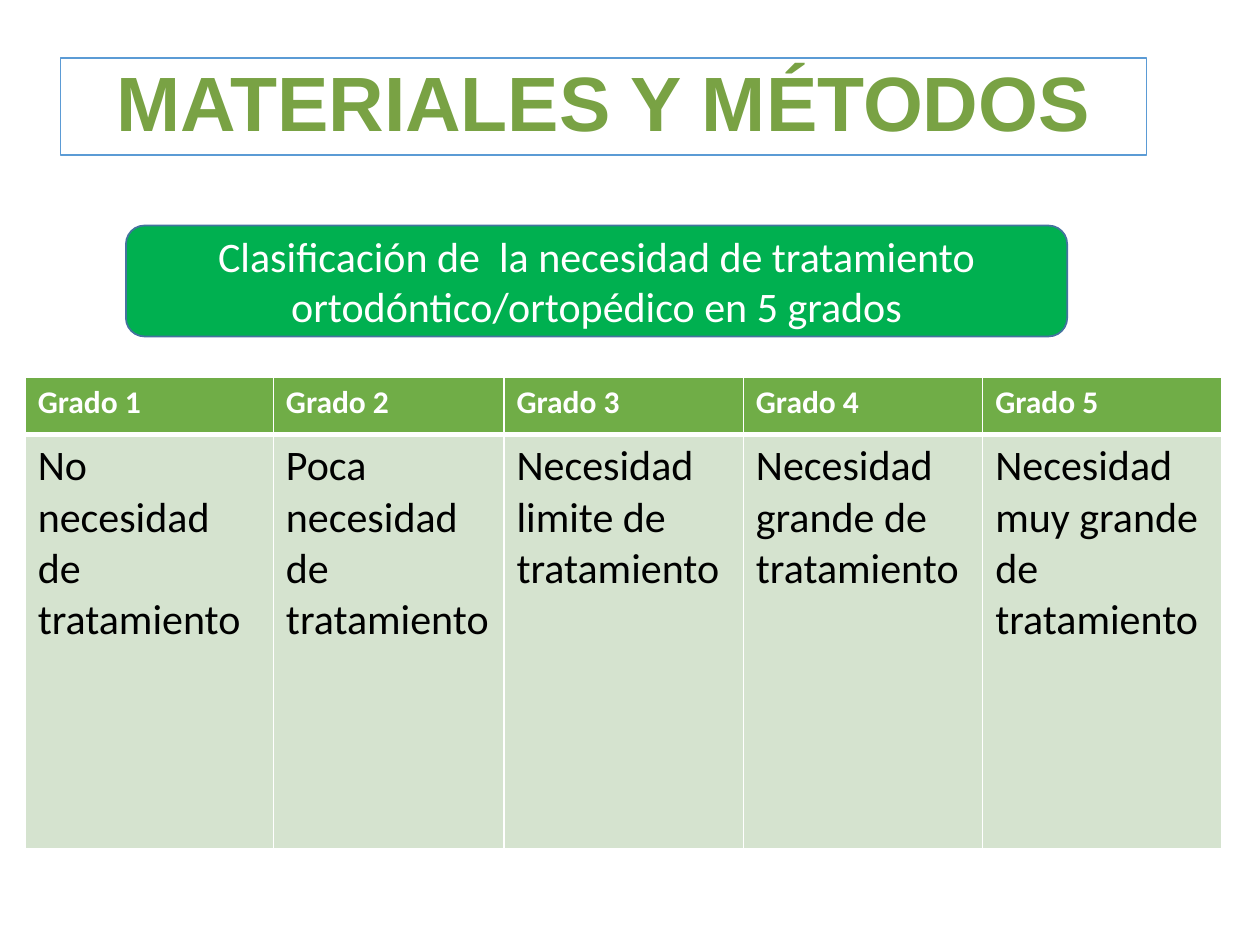
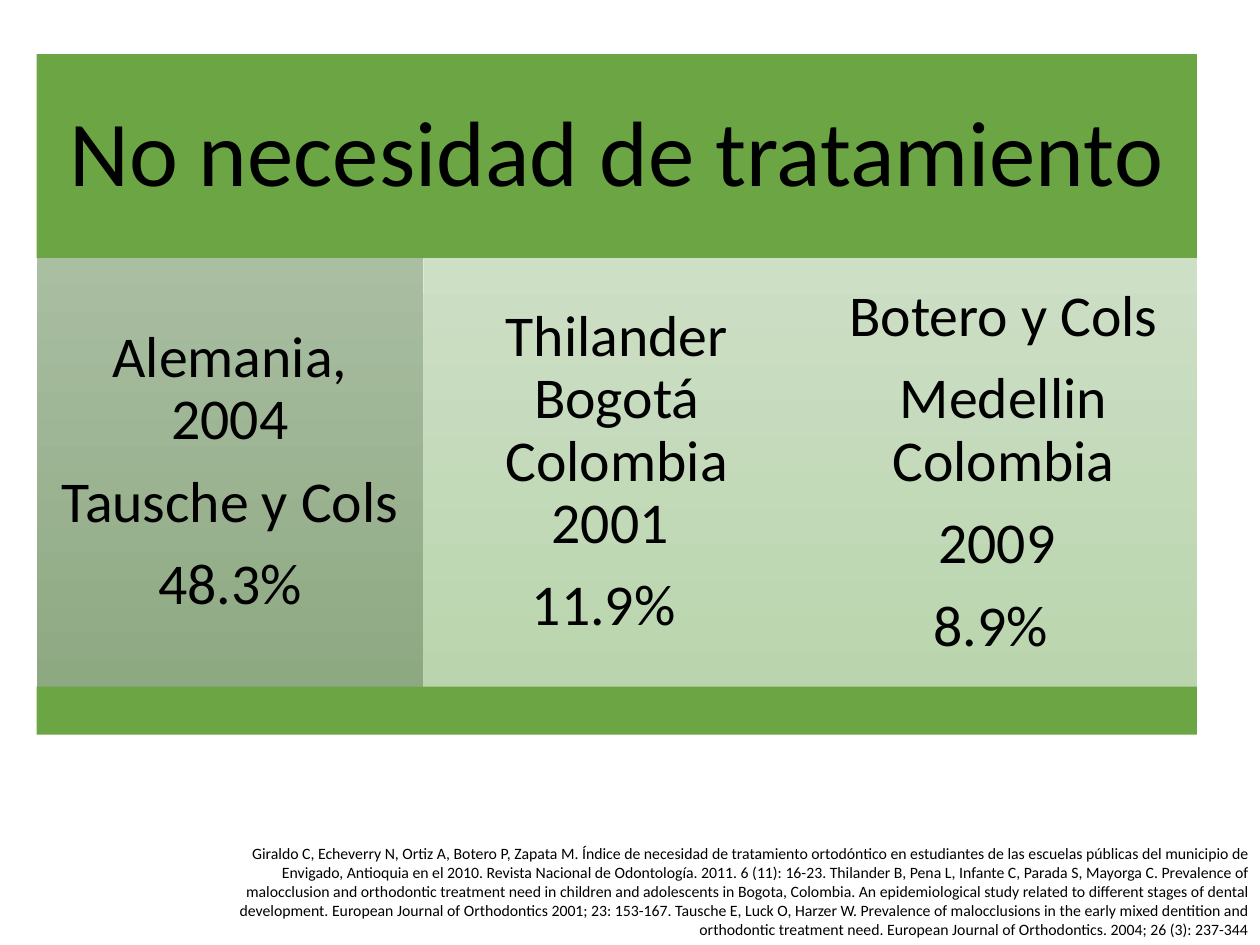
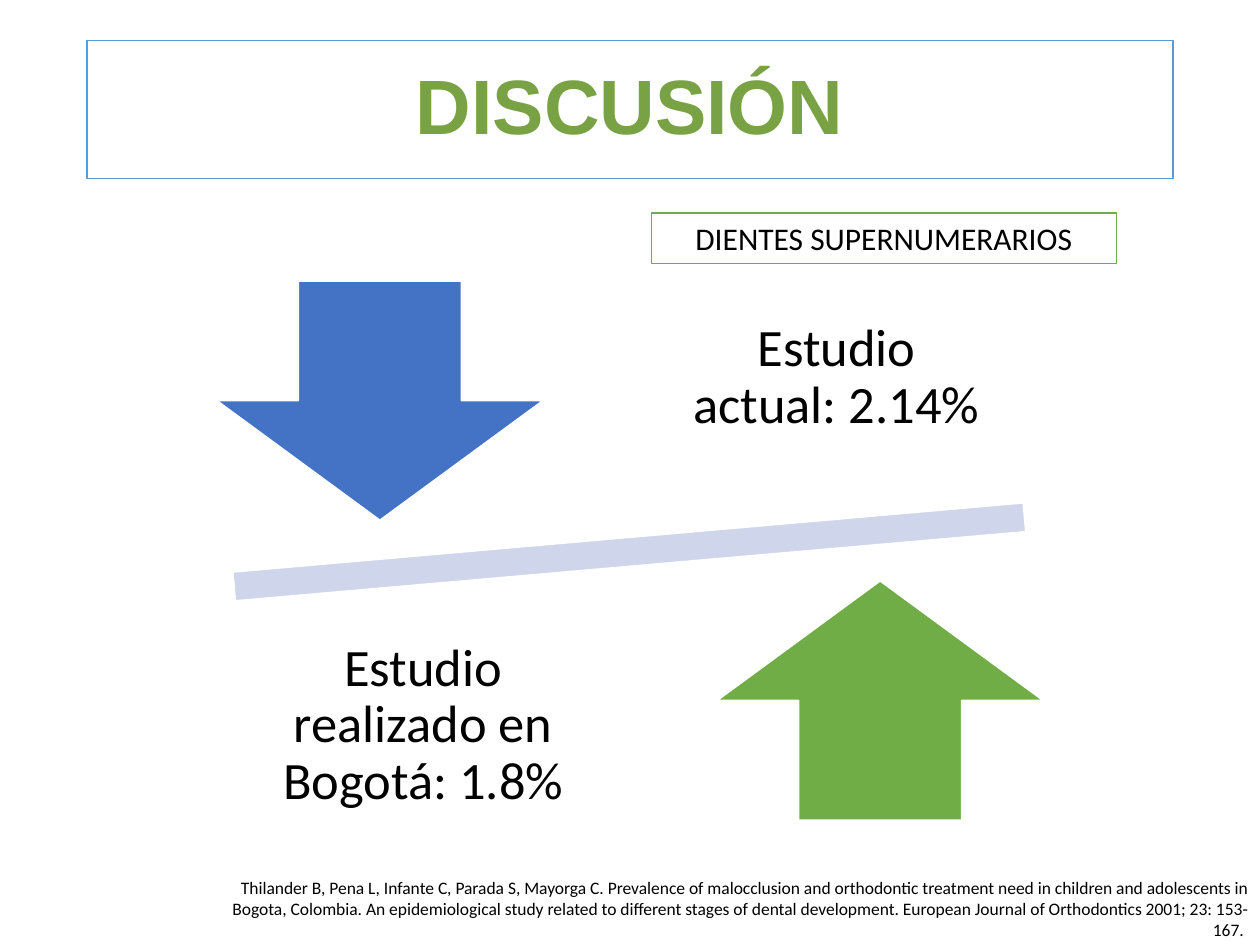
from lxml import etree
from pptx import Presentation
from pptx.dml.color import RGBColor
from pptx.enum.shapes import MSO_SHAPE
from pptx.enum.text import MSO_ANCHOR, PP_ALIGN
from pptx.oxml.ns import qn
from pptx.util import Inches, Pt

RECT, ROUNDED = MSO_SHAPE.RECTANGLE, MSO_SHAPE.ROUNDED_RECTANGLE
MINUS = MSO_SHAPE.MATH_MINUS
DOWN, UP = MSO_SHAPE.DOWN_ARROW, MSO_SHAPE.UP_ARROW
LEFT, CENTER, RIGHT = PP_ALIGN.LEFT, PP_ALIGN.CENTER, PP_ALIGN.RIGHT
TOP, MIDDLE = MSO_ANCHOR.TOP, MSO_ANCHOR.MIDDLE

WHITE = RGBColor(0xFF, 0xFF, 0xFF)
BLACK = RGBColor(0x00, 0x00, 0x00)
TITLE_GREEN = RGBColor(0x79, 0xA2, 0x44)
TITLE_LINE = RGBColor(0x5B, 0x9B, 0xD5)
GREEN = RGBColor(0x70, 0xAD, 0x47)
PALE_GREEN = RGBColor(0xD5, 0xE3, 0xCF)
BRIGHT_GREEN = RGBColor(0x00, 0xB0, 0x50)
BAND_GREEN = RGBColor(0x6B, 0xA5, 0x44)
BLUE = RGBColor(0x44, 0x72, 0xC4)
DARK_BLUE = RGBColor(0x43, 0x73, 0x9E)
PALE_BLUE = RGBColor(0xCF, 0xD5, 0xEA)
GRAY_FADE = (RGBColor(0xAA, 0xBE, 0xA2), RGBColor(0x8D, 0xA9, 0x82))
GREEN_FADE = (RGBColor(0xCD, 0xDF, 0xC5), RGBColor(0xBA, 0xD5, 0xAE))

# Content
CLASSIFICATION = ("Clasificación de  la necesidad de tratamiento "
                  "ortodóntico/ortopédico en 5 grados")
GRADES = [
    ("Grado 1", "No necesidad de tratamiento", 1.97),
    ("Grado 2", "Poca necesidad de tratamiento", 1.83),
    ("Grado 3", "Necesidad limite de tratamiento", 1.9),
    ("Grado 4", "Necesidad grande de tratamiento", 1.9),
    ("Grado 5", "Necesidad muy grande de tratamiento", 1.9),
]
STUDIES = [
    (["Alemania, 2004", "Tausche y Cols", "48.3%"], GRAY_FADE),
    (["Thilander Bogotá Colombia 2001 ", "11.9%  "], GREEN_FADE),
    (["Botero y Cols", "Medellin Colombia", "2009 ", "8.9%  "], GREEN_FADE),
]
THILANDER = (
    "Thilander B, Pena L, Infante C, Parada S, Mayorga C. Prevalence of "
    "malocclusion and orthodontic treatment need in children and adolescents "
    "in Bogota, Colombia. An epidemiological study related to different stages "
    "of dental development. European Journal of Orthodontics 2001; 23: 153-167. ")
REFERENCES = (
    "Giraldo C, Echeverry N, Ortiz A, Botero P, Zapata M. Índice de necesidad "
    "de tratamiento ortodóntico en estudiantes de las escuelas públicas del "
    "municipio de Envigado, Antioquia en el 2010. Revista Nacional de "
    "Odontología. 2011. 6 (11): 16-23. " + THILANDER +
    "Tausche E, Luck O, Harzer W. Prevalence of malocclusions in the early "
    "mixed dentition and orthodontic treatment need. European Journal of "
    "Orthodontics. 2004; 26 (3): 237-344")
ARROWS = [(DOWN, 1.72, 2.23, BLUE), (UP, 5.69, 4.61, GREEN)]
COMPARISON = [
    ("Estudio actual: 2.14%", 5.26, 2),
    ("Estudio realizado en Bogotá: 1.8%", 1.98, 4.76),
]


def write(tf, text, size=18, color=BLACK, bold=False, font="Calibri",
          align=CENTER, anchor=MIDDLE, spacing=None, after=0, inset=None):
    """Write a string, or a list of paragraphs, into a text frame."""
    tf.word_wrap = True
    tf.vertical_anchor = anchor
    if inset is not None:
        tf.margin_left = tf.margin_right = Inches(inset)
        tf.margin_top = tf.margin_bottom = Inches(inset)
    for i, line in enumerate([text] if isinstance(text, str) else text):
        p = tf.add_paragraph() if i else tf.paragraphs[0]
        p.alignment = align
        p.space_after = Pt(after)
        if spacing:
            p.line_spacing = spacing
        r = p.add_run()
        r.text = line
        r.font.name, r.font.size, r.font.bold = font, Pt(size), bold
        r.font.color.rgb = color


def add_box(s, box, kind=RECT, fill=None, line=None, width=1.0):
    """Add a shape; fill is a colour, a (top, bottom) pair or nothing."""
    sp = s.shapes.add_shape(kind, *map(Inches, box))
    sp.shadow.inherit = False
    if fill is None:
        sp.fill.background()
    elif isinstance(fill, RGBColor):
        sp.fill.solid()
        sp.fill.fore_color.rgb = fill
    else:
        sp.fill.gradient()
        sp.fill.gradient_angle = 270
        for stop, color in zip(sp.fill.gradient_stops, fill):
            stop.color.rgb = color
    if line is None:
        sp.line.fill.background()
    else:
        sp.line.color.rgb = line
        sp.line.width = Pt(width)
    return sp


def add_text(s, text, box, **fmt):
    write(s.shapes.add_textbox(*map(Inches, box)).text_frame, text, **fmt)


def add_title(s, text, box):
    sp = add_box(s, box, line=TITLE_LINE, width=0.75)
    write(sp.text_frame, text, size=44, color=TITLE_GREEN, bold=True,
          font="Arial", spacing=0.9)


def add_reference(s, text, box, size):
    add_text(s, text, box, size=size, align=RIGHT, anchor=TOP)


def set_borders(cell, **widths):
    """Draw white cell borders with widths in points for L, R, T and B."""
    tcPr = cell._tc.get_or_add_tcPr()
    for side, width in widths.items():
        ln = etree.SubElement(tcPr, qn("a:ln" + side), w=str(Pt(width)))
        fill = etree.SubElement(ln, qn("a:solidFill"))
        etree.SubElement(fill, qn("a:srgbClr"), val=str(WHITE))


def materials_slide(s):
    add_title(s, "MATERIALES Y MÉTODOS", (0.48, 0.46, 8.62, 0.77))

    # Table of grades
    table = s.shapes.add_table(2, len(GRADES), Inches(0.2), Inches(2.99),
                               Inches(9.5), Inches(3.75)).table
    table.horz_banding = False
    table.rows[0].height, table.rows[1].height = Inches(0.46), Inches(3.29)
    for col, (grade, need, width) in enumerate(GRADES):
        table.columns[col].width = Inches(width)
        head, body = table.cell(0, col), table.cell(1, col)
        set_borders(head, L=1, R=1, T=1, B=3)
        set_borders(body, L=1, R=1, T=3, B=1)
        write(head.text_frame, grade, color=WHITE, bold=True, align=LEFT, anchor=TOP)
        write(body.text_frame, need, size=24, align=LEFT, anchor=TOP)
        for cell, color in ((head, GREEN), (body, PALE_GREEN)):
            cell.fill.solid()
            cell.fill.fore_color.rgb = color

    sp = add_box(s, (1, 1.79, 7.47, 0.88), ROUNDED, BRIGHT_GREEN, DARK_BLUE)
    write(sp.text_frame, CLASSIFICATION, size=24, color=WHITE)


def no_need_slide(s):
    add_reference(s, REFERENCES, (1.62, 6.65, 8.38, 0.86), 9)

    # Heading band, study columns and closing band
    left, top, width = 0.29, 0.43, 9.21
    head_h, column_h, foot_h = 1.62, 3.4, 0.38
    sp = add_box(s, (left, top, width, head_h), fill=BAND_GREEN)
    write(sp.text_frame, "No necesidad de tratamiento", size=53, spacing=0.9,
          after=18.5, inset=0.22)
    column_w = width / len(STUDIES)
    for i, (lines, fade) in enumerate(STUDIES):
        sp = add_box(s, (left + i * column_w, top + head_h, column_w, column_h),
                     fill=fade)
        write(sp.text_frame, lines, size=33, spacing=0.9, after=11.5, inset=0.14)
    add_box(s, (left, top + head_h + column_h, width, foot_h), fill=BAND_GREEN)


def discussion_slide(s):
    # Balance with its two arrows
    beam = add_box(s, (0.71, 3.89, 8.57, 0.98), MINUS, PALE_BLUE, WHITE)
    beam.rotation = 355
    for kind, left, top, color in ARROWS:
        add_box(s, (left, top, 2.59, 1.9), kind, color, WHITE)
    for text, left, top in COMPARISON:
        add_text(s, text, (left, top, 2.76, 2), size=30, spacing=0.9,
                 after=10.5, inset=0.23)

    add_title(s, "DISCUSIÓN", (0.69, 0.32, 8.62, 1.1))
    add_reference(s, THILANDER, (1.58, 6.91, 8.42, 0.61), 10)
    sp = add_box(s, (5.17, 1.69, 3.69, 0.4), line=GREEN, width=0.75)
    write(sp.text_frame, "DIENTES SUPERNUMERARIOS", anchor=TOP)


def main():
    prs = Presentation()
    prs.slide_width, prs.slide_height = Inches(10), Inches(7.5)
    for build in (materials_slide, no_need_slide, discussion_slide):
        build(prs.slides.add_slide(prs.slide_layouts[6]))
    prs.save("out.pptx")


if __name__ == "__main__":
    main()
